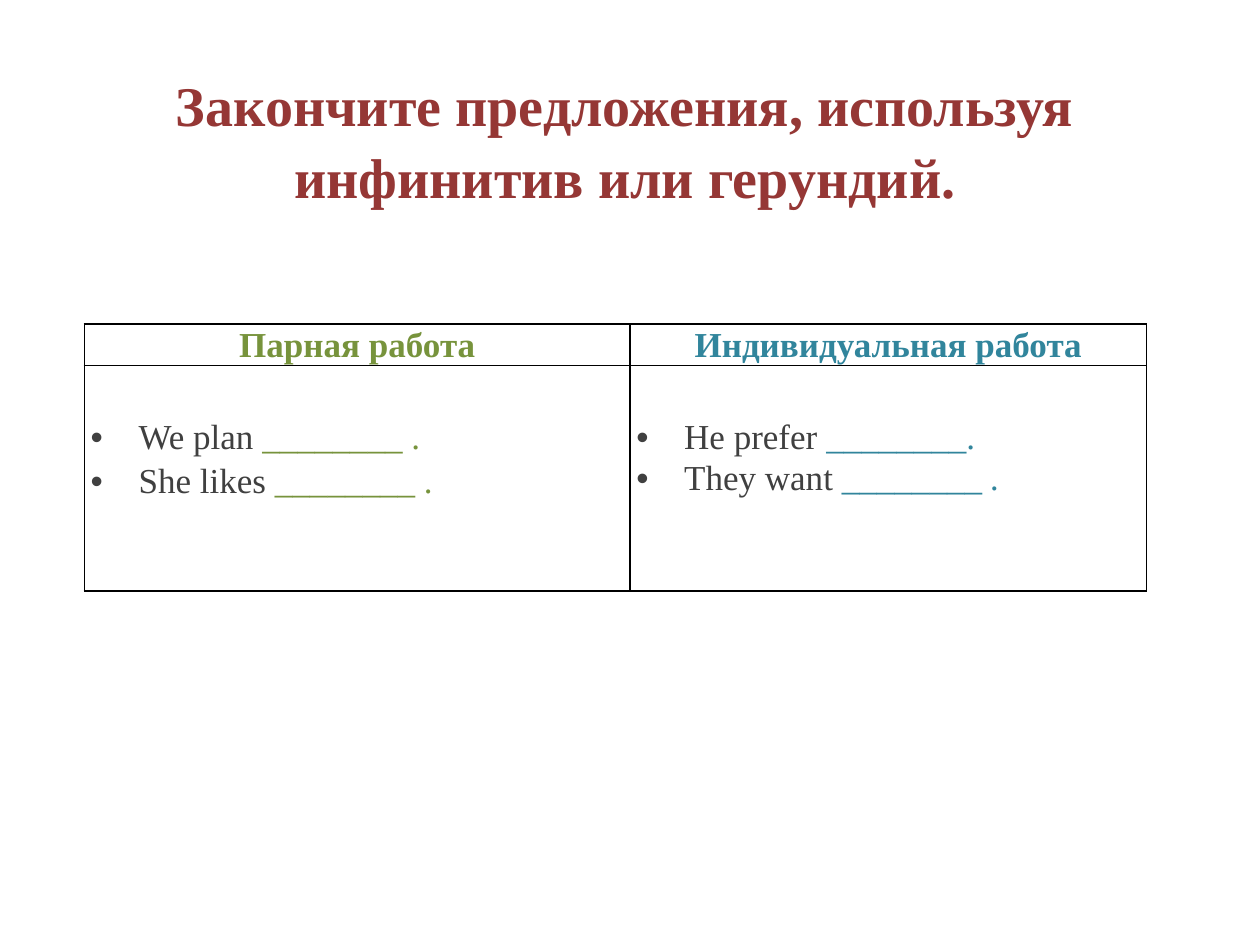
from lxml import etree
from pptx import Presentation
from pptx.dml.color import RGBColor
from pptx.enum import text
from pptx.oxml import ns
from pptx.util import Inches, Pt

FONT = "Times New Roman"
MAROON = RGBColor(0x95, 0x37, 0x35)
GREEN = RGBColor(0x77, 0x93, 0x3C)
TEAL = RGBColor(0x31, 0x85, 0x9C)
GRAY = RGBColor(0x40, 0x40, 0x40)

# heading, colour, (stem, blank, line spacing, italic blank)
EXERCISES = [
    ("Парная работа", GREEN, [
        ("We plan ", "________ .", 1.15, False),
        ("She likes ", "________ .", 1.15, False)]),
    ("Индивидуальная работа", TEAL, [
        ("He prefer ", "________.", 1.15, False),
        ("They want ", "________ .", 1.07, True)]),
]


def add_run(paragraph, wording, size, color, bold=False, italic=False):
    run = paragraph.add_run()
    run.text = wording
    font = run.font
    font.name, font.size, font.bold, font.italic = FONT, Pt(size), bold, italic
    font.color.rgb = color


def add_heading(paragraph, wording, size, color):
    paragraph.alignment = text.PP_ALIGN.CENTER
    paragraph.line_spacing = 1.07
    add_run(paragraph, wording, size, color, bold=True)


def add_bullet(paragraph):
    props = paragraph._p.get_or_add_pPr()
    props.set("marL", str(Inches(0.38)))
    props.set("indent", str(-Inches(0.38)))
    etree.SubElement(props, ns.qn("a:buFont"), typeface="Arial")
    etree.SubElement(props, ns.qn("a:buChar"), char="•")


def add_borders(cell):
    props = cell._tc.get_or_add_tcPr()
    for position, side in enumerate(("lnL", "lnR", "lnT", "lnB")):
        line = etree.Element(ns.qn(f"a:{side}"), w=str(Pt(1)))
        fill = etree.SubElement(line, ns.qn("a:solidFill"))
        etree.SubElement(fill, ns.qn("a:srgbClr"), val="000000")
        props.insert(position, line)


def format_cell(cell, top=0):
    cell.fill.background()
    cell.margin_left = cell.margin_right = Inches(0.05)
    cell.margin_top, cell.margin_bottom = Inches(top), 0
    add_borders(cell)


def add_sentences(cell, sentences, color):
    frame = cell.text_frame
    for number, (stem, blank, spacing, italic) in enumerate(sentences):
        sentence = frame.add_paragraph() if number else frame.paragraphs[0]
        sentence.line_spacing = spacing
        add_bullet(sentence)
        add_run(sentence, stem, 20, GRAY)
        add_run(sentence, blank, 20, color, italic=italic)


def add_exercises(slide):
    table = slide.shapes.add_table(
        2, 2, Inches(0.67), Inches(2.57), Inches(8.43), Inches(2.12)).table
    table.first_row = table.horz_banding = False
    for row, height in zip(table.rows, (0.33, 1.79)):
        row.height = Inches(height)
    for column, width in zip(table.columns, (4.33, 4.1)):
        column.width = Inches(width)
    for index, (heading, color, sentences) in enumerate(EXERCISES):
        header, body = table.cell(0, index), table.cell(1, index)
        format_cell(header)
        add_heading(header.text_frame.paragraphs[0], heading, 20, color)
        format_cell(body, top=0.37)
        add_sentences(body, sentences, color)


def add_title(slide, wording):
    title = slide.shapes.title
    title.left, title.top = Inches(0.59), Inches(0.29)
    title.width, title.height = Inches(8.74), Inches(1.61)
    title.text_frame.vertical_anchor = text.MSO_ANCHOR.MIDDLE
    add_heading(title.text_frame.paragraphs[0], wording, 32, MAROON)


def main():
    """Build the infinitive or gerund exercise slide."""
    deck = Presentation()
    deck.slide_width, deck.slide_height = Inches(10), Inches(7.5)
    slide = deck.slides.add_slide(deck.slide_layouts[0])
    subtitle = slide.placeholders[1].element
    subtitle.getparent().remove(subtitle)
    add_title(slide, "Закончите предложения, используя инфинитив или герундий.")
    add_exercises(slide)
    deck.save("out.pptx")


if __name__ == "__main__":
    main()
